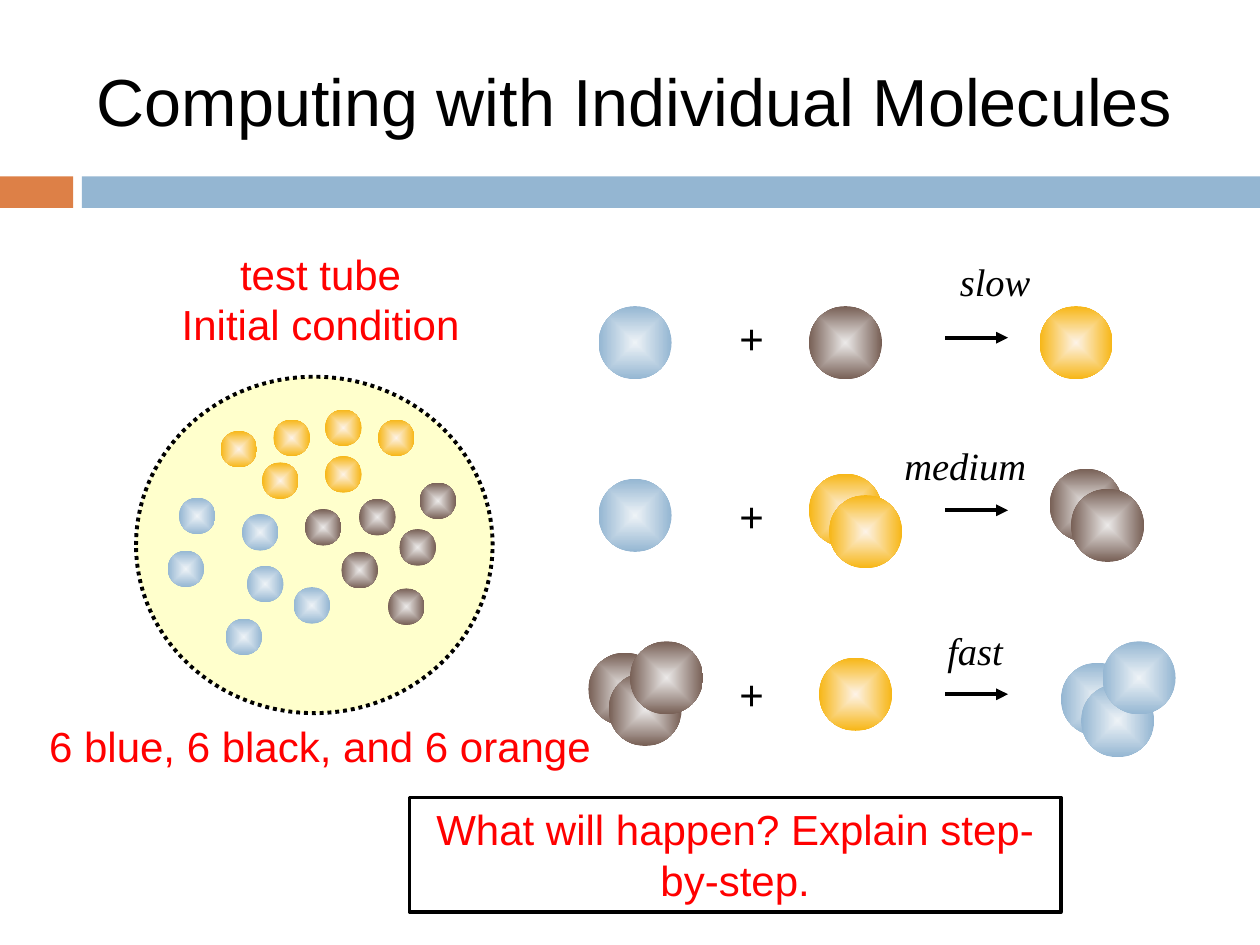
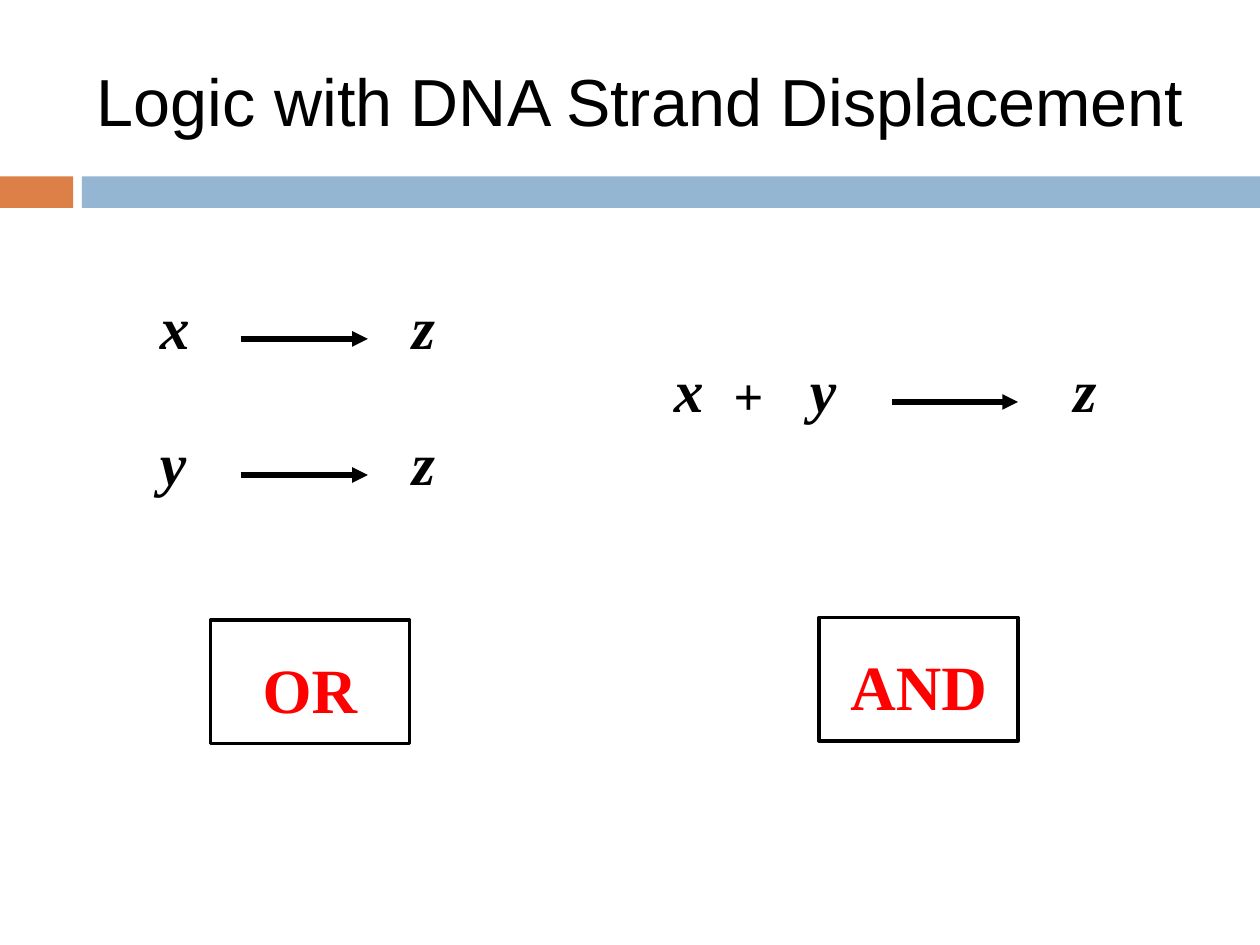
"""Build two slides on computing with molecules and strand displacement."""

from dataclasses import dataclass

import lxml.etree
import pptx
import pptx.dml.color
import pptx.enum.dml
import pptx.enum.shapes
import pptx.enum.text
import pptx.oxml.ns
import pptx.shapes.autoshape
import pptx.slide
import pptx.text.text
import pptx.util

Inches = pptx.util.Inches
RGBColor = pptx.dml.color.RGBColor
Shapes = pptx.enum.shapes.MSO_SHAPE
Align = pptx.enum.text.PP_ALIGN
Anchor = pptx.enum.text.MSO_ANCHOR
qn = pptx.oxml.ns.qn

BLACK = RGBColor(0x00, 0x00, 0x00)
RED = RGBColor(0xFF, 0x00, 0x00)
BAND_ORANGE = RGBColor(0xDD, 0x80, 0x47)
BAND_BLUE = RGBColor(0x94, 0xB6, 0xD2)
TUBE_YELLOW = RGBColor(0xFF, 0xFF, 0xCC)
SANS = "Arial"
SERIF = "Times New Roman"
SMALL = 0.29
LARGE = 0.58

Spot = tuple[float, float]


@dataclass(frozen=True)
class Style:
    """How a piece of text looks."""

    size: float
    font: str = SANS
    color: RGBColor = BLACK
    bold: bool = False
    italic: bool = False


@dataclass(frozen=True)
class Species:
    """The centre and rim colours of one kind of molecule."""

    center: RGBColor
    rim: RGBColor


@dataclass(frozen=True)
class Group:
    """Molecules of one species and their top left corners."""

    species: Species
    spots: tuple[Spot, ...]


@dataclass(frozen=True)
class Reaction:
    """One reaction row with its rate label."""

    rate: str
    rate_spot: Spot
    rate_width: float
    plus_top: float
    arrow_y: float
    groups: tuple[Group, ...]


@dataclass(frozen=True)
class Label:
    """A short unwrapped text."""

    text: str
    left: float
    top: float
    width: float
    height: float
    style: Style


TITLE = Style(38)
PLUS = Style(24)
NOTE = Style(24, color=RED)
RATE = Style(22, SERIF, italic=True)
SYMBOL = Style(34, SERIF, bold=True, italic=True)
SMALL_SYMBOL = Style(30, SERIF, bold=True, italic=True)
GATE = Style(36, SERIF, RED, bold=True)

BLUE = Species(RGBColor(0xEE, 0xF3, 0xF7), BAND_BLUE)
BROWN = Species(RGBColor(0xEC, 0xEA, 0xE9), RGBColor(0x77, 0x5F, 0x55))
ORANGE = Species(RGBColor(0xFD, 0xF3, 0xE8), RGBColor(0xF7, 0xB6, 0x15))

REACTIONS = (
    Reaction("slow", (7.52, 2.0), 0.76, 2.43, 2.68, (
        Group(BLUE, ((4.75, 2.43),)),
        Group(BROWN, ((6.42, 2.43),)),
        Group(ORANGE, ((8.25, 2.43),)),
    )),
    Reaction("medium", (7.08, 3.46), 1.22, 3.84, 4.05, (
        Group(BLUE, ((4.75, 3.8),)),
        Group(ORANGE, ((6.42, 3.76), (6.58, 3.93))),
        Group(BROWN, ((8.33, 3.72), (8.5, 3.88))),
    )),
    Reaction("fast", (7.42, 4.93), 0.66, 5.26, 5.51, (
        Group(BROWN, ((4.67, 5.18), (4.83, 5.34), (5.0, 5.09))),
        Group(ORANGE, ((6.5, 5.22),)),
        Group(BLUE, ((8.42, 5.26), (8.58, 5.43), (8.75, 5.09))),
    )),
)

TUBE_CONTENTS = (
    Group(BROWN, ((2.42, 4.04), (2.85, 3.96), (3.17, 4.2), (2.71, 4.38), (3.33, 3.83), (3.08, 4.67))),
    Group(BLUE, ((1.42, 3.95), (1.33, 4.37), (1.96, 4.49), (1.79, 4.91), (2.33, 4.66), (1.92, 4.08))),
    Group(ORANGE, ((1.75, 3.42), (2.17, 3.33), (2.58, 3.25), (2.08, 3.67), (3.0, 3.33), (2.58, 3.62))),
)


def write(frame: pptx.text.text.TextFrame, text: str, style: Style, align: Align = Align.LEFT) -> None:
    """Fill a text frame, one paragraph a line, in one style."""
    frame.text = text
    for para in frame.paragraphs:
        para.alignment = align
        for span in para.runs:
            span.font.size = pptx.util.Pt(style.size)
            span.font.name = style.font
            span.font.color.rgb = style.color
            span.font.bold = style.bold
            span.font.italic = style.italic


def add_text(page: pptx.slide.Slide, text: str, left: float, top: float, width: float, height: float,
             style: Style, align: Align = Align.LEFT, anchor: Anchor = Anchor.TOP) -> None:
    """Add a wrapped text box."""
    box = page.shapes.add_textbox(Inches(left), Inches(top), Inches(width), Inches(height))
    box.text_frame.word_wrap = True
    box.text_frame.vertical_anchor = anchor
    write(box.text_frame, text, style, align)


def add_label(page: pptx.slide.Slide, label: Label) -> None:
    """Add an unwrapped text box that fits its text."""
    box = page.shapes.add_textbox(
        Inches(label.left), Inches(label.top), Inches(label.width), Inches(label.height))
    box.text_frame.word_wrap = False
    box.text_frame.auto_size = pptx.enum.text.MSO_AUTO_SIZE.SHAPE_TO_FIT_TEXT
    write(box.text_frame, label.text, label.style)


def add_plain(page: pptx.slide.Slide, kind: Shapes, left: float, top: float, width: float, height: float,
              fill: RGBColor | None = None) -> pptx.shapes.autoshape.Shape:
    """Add a preset shape without shadow or outline."""
    shape = page.shapes.add_shape(kind, Inches(left), Inches(top), Inches(width), Inches(height))
    shape.shadow.inherit = False
    shape.line.fill.background()
    if fill is None:
        shape.fill.background()
    else:
        shape.fill.solid()
        shape.fill.fore_color.rgb = fill
    return shape


def outline(shape: pptx.shapes.autoshape.Shape, width: float) -> None:
    """Give a shape a black outline."""
    shape.line.color.rgb = BLACK
    shape.line.width = pptx.util.Pt(width)


def add_framed(page: pptx.slide.Slide, text: str, left: float, top: float, width: float, height: float,
               style: Style, inset: float = 0.05) -> None:
    """Add a black frame with centred text that starts below the inset."""
    box = add_plain(page, Shapes.RECTANGLE, left, top, width, height)
    outline(box, 2)
    box.text_frame.word_wrap = True
    box.text_frame.vertical_anchor = Anchor.TOP
    box.text_frame.margin_top = Inches(inset)
    write(box.text_frame, text, style, Align.CENTER)


def add_arrow(page: pptx.slide.Slide, left: float, y: float, length: float, weight: float) -> None:
    """Add a black arrow that points right."""
    arrow = page.shapes.add_connector(
        pptx.enum.shapes.MSO_CONNECTOR.STRAIGHT, Inches(left), Inches(y), Inches(left + length), Inches(y))
    arrow.line.color.rgb = BLACK
    arrow.line.width = pptx.util.Pt(weight)
    head = lxml.etree.SubElement(arrow.line._get_or_add_ln(), qn("a:tailEnd"))
    head.set("type", "triangle")
    lxml.etree.SubElement(arrow.element.spPr, qn("a:effectLst"))


def add_molecules(page: pptx.slide.Slide, group: Group, size: float) -> None:
    """Add the molecules of a group, shaded from centre to rim."""
    for left, top in group.spots:
        ball = add_plain(page, Shapes.OVAL, left, top, size, size)
        ball.fill.gradient()
        stops = ball.fill.gradient_stops
        for stop, position, color in zip(stops, (0, 1), (group.species.center, group.species.rim)):
            stop.position = position
            stop.color.rgb = color
        gradient = ball.element.spPr.find(qn("a:gradFill"))
        gradient.remove(gradient.find(qn("a:lin")))
        shading = lxml.etree.SubElement(gradient, qn("a:path"))
        shading.set("path", "shape")
        focus = lxml.etree.SubElement(shading, qn("a:fillToRect"))
        for side in "ltrb":
            focus.set(side, "50000")


def add_page(deck: pptx.presentation.Presentation, title: str) -> pptx.slide.Slide:
    """Add a slide with the shared bands and title."""
    page = deck.slides.add_slide(deck.slide_layouts[6])
    add_plain(page, Shapes.RECTANGLE, 0, 1.4, 0.58, 0.25, BAND_ORANGE)
    add_plain(page, Shapes.RECTANGLE, 0.65, 1.4, 9.35, 0.25, BAND_BLUE)
    add_text(page, title, 0.67, 0.25, 8.92, 1.08, TITLE, anchor=Anchor.MIDDLE)
    return page


def build_molecules(deck: pptx.presentation.Presentation) -> None:
    """Build the slide with the test tube and three reactions."""
    page = add_page(deck, "Computing with Individual Molecules")
    for reaction in REACTIONS:
        add_label(page, Label("+", 5.77, reaction.plus_top, 0.4, 0.5, PLUS))
        add_arrow(page, 7.5, reaction.arrow_y, 0.5, 2.25)
        for group in reaction.groups:
            add_molecules(page, group, LARGE)
        add_label(page, Label(reaction.rate, *reaction.rate_spot, reaction.rate_width, 0.47, RATE))

    tube = add_plain(page, Shapes.OVAL, 1.08, 2.99, 2.83, 2.67, TUBE_YELLOW)
    outline(tube, 2.25)
    tube.line.dash_style = pptx.enum.dml.MSO_LINE.ROUND_DOT
    for group in TUBE_CONTENTS:
        add_molecules(page, group, SMALL)
    add_text(page, "test tube\nInitial condition", 1.33, 1.92, 2.43, 0.91, NOTE, Align.CENTER)
    add_text(page, "6 blue, 6 black, and 6 orange", 0.25, 5.67, 4.58, 0.5, NOTE, Align.CENTER)
    add_framed(page, "What will happen? Explain step-by-step.", 3.25, 6.33, 5.17, 0.91, NOTE)


def build_logic(deck: pptx.presentation.Presentation) -> None:
    """Build the slide with the OR and AND gates."""
    page = add_page(deck, "Logic with DNA Strand Displacement")
    for symbol, width, top in (("x", 0.53, 2.25), ("y", 0.41, 3.33)):
        add_label(page, Label(symbol, 1.17, top, width, 0.67, SYMBOL))
        add_arrow(page, 1.91, top + 0.44, 1.01, 3)
        add_label(page, Label("z", 3.17, top, 0.39, 0.67, SYMBOL))

    for symbol, left, width in (("x", 5.25, 0.53), ("y", 6.33, 0.5), ("z", 8.42, 0.47)):
        add_label(page, Label(symbol, left, 2.75, width, 0.67, SYMBOL))
    add_label(page, Label("+", 5.72, 2.83, 0.53, 0.61, SMALL_SYMBOL))
    add_arrow(page, 7.08, 3.19, 1, 3)

    for gate, left, top in (("OR", 1.67, 4.92), ("AND", 6.5, 4.9)):
        add_framed(page, gate, left, top, 1.58, 0.98, GATE, inset=0.24)


def main() -> None:
    """Build and save the deck."""
    deck = pptx.Presentation()
    deck.slide_width = Inches(10)
    deck.slide_height = Inches(7.5)
    build_molecules(deck)
    build_logic(deck)
    deck.save("out.pptx")


if __name__ == "__main__":
    main()
